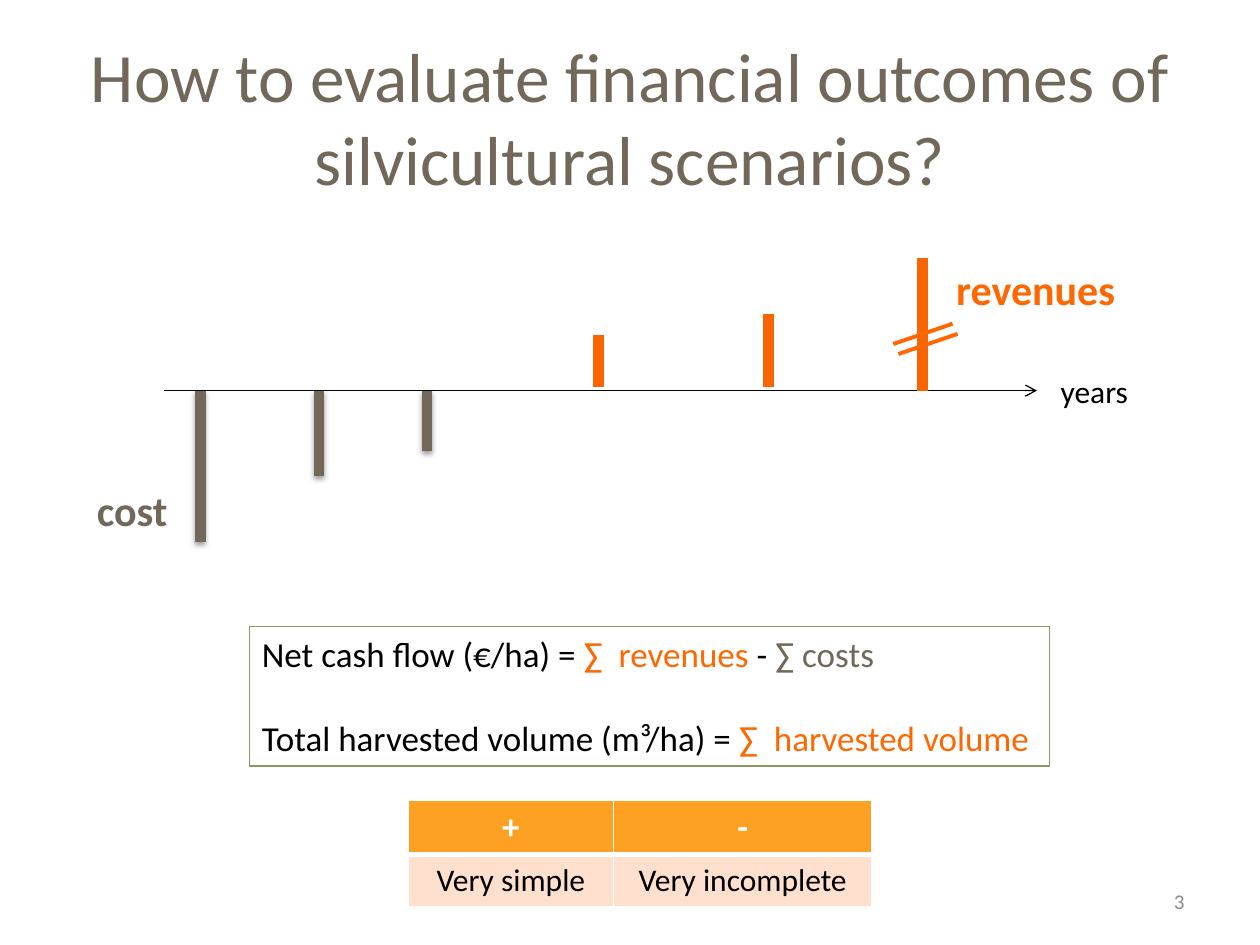
from dataclasses import dataclass

from lxml import etree
from pptx import Presentation
from pptx.dml.color import RGBColor
from pptx.enum.shapes import MSO_CONNECTOR, MSO_SHAPE
from pptx.enum.text import MSO_ANCHOR, PP_ALIGN
from pptx.oxml.ns import qn
from pptx.util import Inches, Pt

STRAIGHT, RECTANGLE = MSO_CONNECTOR.STRAIGHT, MSO_SHAPE.RECTANGLE
LEFT, CENTER, RIGHT = PP_ALIGN.LEFT, PP_ALIGN.CENTER, PP_ALIGN.RIGHT
TOP, MIDDLE = MSO_ANCHOR.TOP, MSO_ANCHOR.MIDDLE


@dataclass(frozen=True)
class Theme:
    font: str = "Calibri"
    black: str = "000000"
    white: str = "FFFFFF"
    taupe: str = "71685A"
    orange: str = "FF6700"
    bar_orange: str = "F96500"
    frame: str = "909465"
    header: str = "FEA022"
    body: str = "FFDFCD"
    muted: str = "8C8C8C"
    title: float = 39.6
    label: float = 24
    formula: float = 20
    text: float = 18
    small: float = 12


THEME = Theme()


@dataclass(frozen=True)
class Run:
    text: str
    size: float
    color: str = THEME.black
    bold: bool = False


@dataclass(frozen=True)
class Label:
    box: tuple[float, float, float, float]
    run: Run
    align: PP_ALIGN = LEFT
    anchor: MSO_ANCHOR = TOP
    wrap: bool = False


@dataclass(frozen=True)
class Line:
    start: tuple[float, float]
    end: tuple[float, float]
    color: str
    width: float
    shadow: bool = False
    arrow: bool = False


def write_runs(paragraph, runs: list[Run], align: PP_ALIGN = LEFT) -> None:
    paragraph.alignment = align
    for item in runs:
        run = paragraph.add_run()
        run.text = item.text
        formats = {"name": THEME.font, "size": Pt(item.size), "bold": item.bold}
        for key, value in formats.items():
            setattr(run.font, key, value)
        run.font.color.rgb = RGBColor.from_string(item.color)


def draw_label(slide, label: Label) -> None:
    frame = slide.shapes.add_textbox(*map(Inches, label.box)).text_frame
    frame.word_wrap = label.wrap
    frame.vertical_anchor = label.anchor
    write_runs(frame.paragraphs[0], [label.run], label.align)


def draw_line(slide, line: Line) -> None:
    connector = slide.shapes.add_connector(STRAIGHT, *map(Inches, line.start + line.end))
    connector.line.color.rgb = RGBColor.from_string(line.color)
    connector.line.width = Pt(line.width)
    if line.arrow:
        etree.SubElement(connector.line._get_or_add_ln(), qn("a:tailEnd"), type="arrow")
    effects = etree.SubElement(connector._element.spPr, qn("a:effectLst"))
    if line.shadow:
        shadow = etree.SubElement(
            effects, qn("a:outerShdw"), blurRad=str(Pt(3.1)), dist=str(Pt(1.6)),
            dir="5400000", rotWithShape="0")
        color = etree.SubElement(shadow, qn("a:srgbClr"), val=THEME.black)
        etree.SubElement(color, qn("a:alpha"), val="38000")


def draw_formulas(slide, box: tuple[float, ...], formulas: list[list[Run]]) -> None:
    panel = slide.shapes.add_shape(RECTANGLE, *map(Inches, box))
    panel.shadow.inherit = False
    panel.fill.background()
    panel.line.color.rgb = RGBColor.from_string(THEME.frame)
    panel.line.width = Pt(0.75)
    frame = panel.text_frame
    frame.word_wrap = False
    frame.vertical_anchor = TOP
    for index, runs in enumerate(formulas):
        paragraph = frame.add_paragraph() if index else frame.paragraphs[0]
        if index:
            paragraph.space_before = Pt(24)
        write_runs(paragraph, runs)


def set_borders(cell, widths: dict[str, float]) -> None:
    properties = cell._tc.get_or_add_tcPr()
    for side, width in widths.items():
        border = etree.SubElement(properties, qn(f"a:ln{side}"), w=str(Pt(width)))
        fill = etree.SubElement(border, qn("a:solidFill"))
        etree.SubElement(fill, qn("a:srgbClr"), val=THEME.white)


def draw_table(slide, left: float, top: float, columns: list[float],
               row_height: float, rows: list[list[str]]) -> None:
    table = slide.shapes.add_table(
        len(rows), len(columns), Inches(left), Inches(top),
        Inches(sum(columns)), Inches(row_height * len(rows))).table
    for column, width in zip(table.columns, columns):
        column.width = Inches(width)
    for r, texts in enumerate(rows):
        table.rows[r].height = Inches(row_height)
        header = r == 0
        for c, text in enumerate(texts):
            cell = table.cell(r, c)
            set_borders(cell, {"L": 1, "R": 1, "T": 1 if header else 3, "B": 3 if header else 1})
            cell.fill.solid()
            cell.fill.fore_color.rgb = RGBColor.from_string(THEME.header if header else THEME.body)
            run = (Run(text, THEME.formula, THEME.white, True) if header
                   else Run(text, THEME.text))
            write_runs(cell.text_frame.paragraphs[0], [run], CENTER)


AXIS_Y = 3.1
COST_BARS = [(1.59, 4.3), (2.53, 3.78), (3.39, 3.58)]  # x, bottom
REVENUE_BARS = [(4.75, 2.66, 3.07), (6.1, 2.49, 3.07), (7.32, 2.05, AXIS_Y)]  # x, top, foot
BREAK_MARKS = [(7.09, 2.73), (7.13, 2.81)]

LABELS = [
    Label((0.5, 0.3, 9, 1.25),
          Run("How to evaluate financial outcomes of silvicultural scenarios?",
              THEME.title, THEME.taupe), CENTER, MIDDLE, True),
    Label((8.32, 2.9, 0.74, 0.4), Run("years", THEME.text)),
    Label((7.49, 2.04, 1.48, 0.5), Run("revenues", THEME.label, THEME.orange, True)),
    Label((0.67, 3.8, 0.77, 0.5), Run("cost", THEME.label, THEME.taupe, True)),
    Label((7.17, 6.95, 2.33, 0.4), Run("3", THEME.small, THEME.muted), RIGHT, MIDDLE, True),
]

FORMULAS = [
    [Run("Net cash flow (€/ha) = ", THEME.formula),
     Run("∑  revenues ", THEME.formula, THEME.orange),
     Run("- ", THEME.formula),
     Run("∑ costs", THEME.formula, THEME.taupe)],
    [Run("Total harvested volume (m³/ha) = ", THEME.formula),
     Run("∑  harvested volume", THEME.formula, THEME.orange)],
]


def main() -> None:
    presentation = Presentation()
    presentation.slide_width, presentation.slide_height = Inches(10), Inches(7.5)
    slide = presentation.slides.add_slide(presentation.slide_layouts[6])

    # Timeline: axis, costs below, revenues above, break in the last bar
    lines = [Line((1.3, AXIS_Y), (8.23, AXIS_Y), THEME.black, 0.75, arrow=True)]
    lines += [Line((x, AXIS_Y), (x, bottom), THEME.taupe, 6, shadow=True)
              for x, bottom in COST_BARS]
    lines += [Line((x, top), (x, foot), THEME.bar_orange, 6)
              for x, top, foot in REVENUE_BARS]
    lines += [Line((x, y), (x + 0.47, y - 0.16), THEME.orange, 2.25)
              for x, y in BREAK_MARKS]
    for line in lines:
        draw_line(slide, line)

    # Title, timeline labels and page number
    for label in LABELS:
        draw_label(slide, label)

    # Formulas and their pros and cons
    draw_formulas(slide, (1.98, 4.97, 6.35, 1.11), FORMULAS)
    draw_table(slide, 3.24, 6.35, [1.63, 2.05], 0.41,
               [["+", "-"], ["Very simple", "Very incomplete"]])

    presentation.save("out.pptx")


if __name__ == "__main__":
    main()
